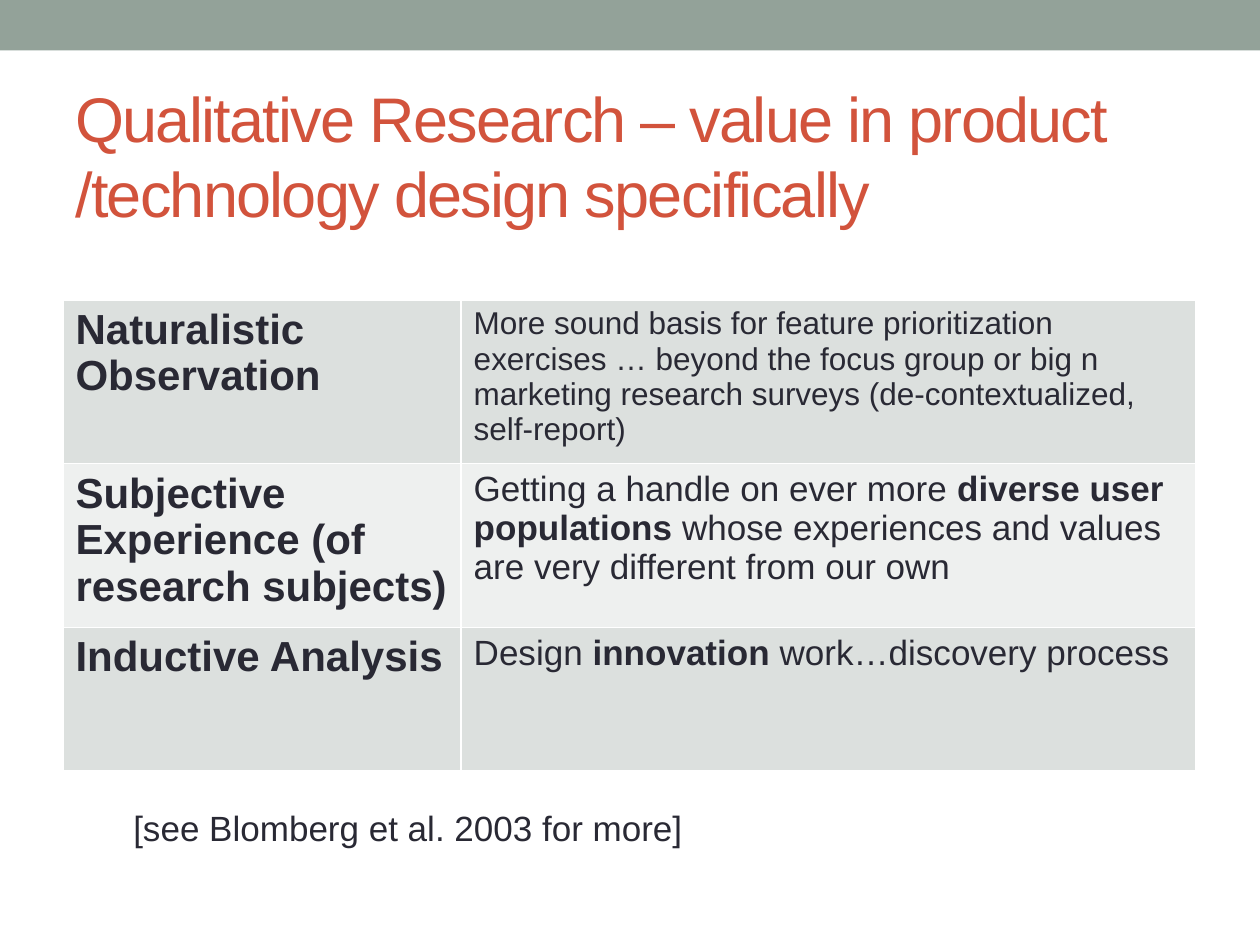
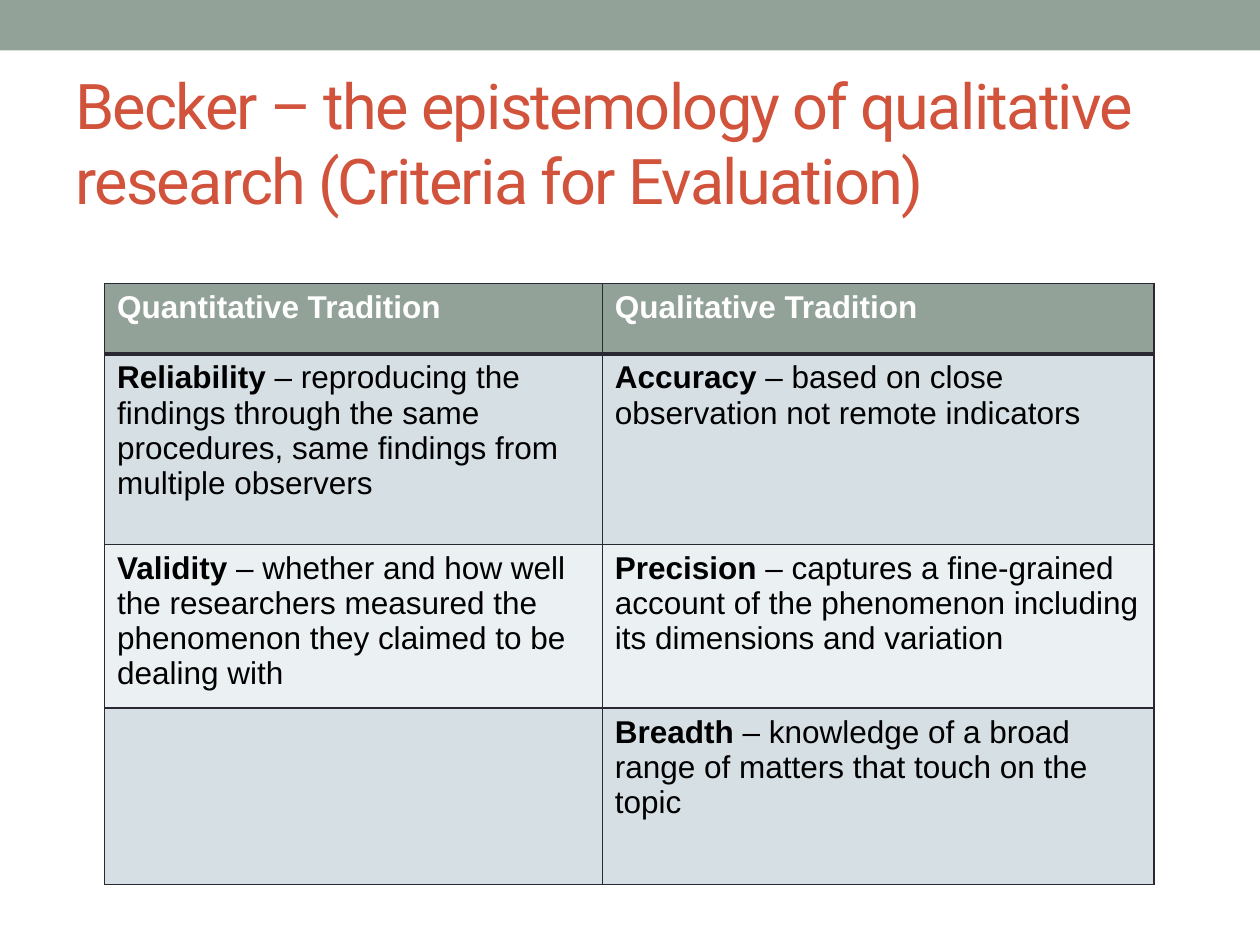
from lxml import etree
from pptx import Presentation
from pptx.dml.color import RGBColor
from pptx.enum.shapes import MSO_SHAPE
from pptx.enum.text import MSO_ANCHOR
from pptx.oxml.ns import qn
from pptx.util import Inches, Pt

RECTANGLE = MSO_SHAPE.RECTANGLE
MIDDLE = MSO_ANCHOR.MIDDLE

SAGE = "93A299"
RUST = "D2533C"
INK = "292934"
WHITE = "FFFFFF"
BLACK = "000000"


def color(hex_value):
    return RGBColor.from_string(hex_value)


def add_runs(paragraph, runs, size, hex_value, font="Arial", spacing=None):
    """Add (text, bold) runs that share one style."""
    for text, bold in runs:
        run = paragraph.add_run()
        run.text = text
        run.font.name = font
        run.font.size = Pt(size)
        run.font.bold = bold
        run.font.color.rgb = color(hex_value)
        if spacing is not None:
            run.font._element.set("spc", str(spacing))


# Each table cell is (size, runs), each run is (text, bold)
value_rows = [
    [(24, [("Naturalistic Observation", True)]),
     (18, [("More sound basis for feature prioritization exercises … beyond the focus "
            "group or big n marketing research surveys (de-contextualized, self-report)", False)])],
    [(24, [("Subjective Experience (of research subjects)", True)]),
     (20, [("Getting a handle on ever more ", False),
           ("diverse user populations ", True),
           ("whose experiences and values are very different from our own", False)])],
    [(24, [("Inductive Analysis", True)]),
     (20, [("Design ", False), ("innovation", True),
           (" work…discovery process", False)])],
]

criteria_rows = [
    [(18, [("Quantitative Tradition", True)]),
     (18, [("Qualitative Tradition", True)])],
    [(18, [("Reliability", True),
           (" – reproducing the findings through the same procedures, "
            "same findings from multiple observers", False)]),
     (18, [("Accuracy", True),
           (" – based on close observation not remote indicators", False)])],
    [(18, [("Validity", True),
           (" – whether and how well the researchers measured the phenomenon "
            "they claimed to be dealing with", False)]),
     (18, [("Precision", True),
           (" – captures a fine-grained account of the phenomenon including "
            "its dimensions and variation", False)])],
    [(18, []),
     (18, [("Breadth", True),
           (" – knowledge of a broad range of matters that touch on the topic", False)])],
]

slide_contents = [
    {
        "title": "Qualitative Research – value in product /technology design specifically",
        "title_font": "Arial",
        "title_box": (0.5, 0.69, 9, 1.08),
        "rows": value_rows,
        "table_corner": (0.5, 2.38),
        "columns": [3.16, 5.83],
        "heights": [1.21, 1.21, 1.14],
        "header": False,
        "bands": ["DCE0DE", "EEF0EF"],
        "text_color": INK,
        "border": WHITE,
        "citation": "[see Blomberg et al. 2003 for more]",
    },
    {
        "title": "Becker – the epistemology of qualitative research (Criteria for Evaluation)",
        "title_font": "Roboto",
        "title_box": (0.5, 0.5, 8.83, 1.25),
        "rows": criteria_rows,
        "table_corner": (0.83, 2.25),
        "columns": [3.95, 4.38],
        "heights": [0.56, 1.51, 1.22, 1.4],
        "header": True,
        "bands": ["D5DFE4", "EBF0F2"],
        "text_color": BLACK,
        "border": INK,
        "citation": None,
    },
]

presentation = Presentation()
presentation.slide_width = Inches(10)
presentation.slide_height = Inches(7.5)
blank_layout = presentation.slide_layouts[6]

for content in slide_contents:
    slide = presentation.slides.add_slide(blank_layout)

    # Top band
    band = slide.shapes.add_shape(RECTANGLE, 0, 0, Inches(10), Inches(0.4))
    band.shadow.inherit = False
    band.fill.solid()
    band.fill.fore_color.rgb = color(SAGE)
    band.line.fill.background()

    # Title
    title = slide.shapes.add_textbox(*[Inches(length) for length in content["title_box"]])
    title.text_frame.word_wrap = True
    title.text_frame.vertical_anchor = MIDDLE
    paragraph = title.text_frame.paragraphs[0]
    paragraph.line_spacing = Pt(43)
    add_runs(paragraph, [(content["title"], False)], 36, RUST, content["title_font"], -100)

    # Table grid
    rows, columns, heights = content["rows"], content["columns"], content["heights"]
    left, top = content["table_corner"]
    table = slide.shapes.add_table(
        len(rows), len(columns), Inches(left), Inches(top),
        Inches(sum(columns)), Inches(sum(heights))).table
    table.first_row = content["header"]
    table.horz_banding = False
    for column, width in zip(table.columns, columns):
        column.width = Inches(width)
    for row, height in zip(table.rows, heights):
        row.height = Inches(height)

    # Table cells: borders, fill, text
    for row_index, row_cells in enumerate(rows):
        is_header = content["header"] and row_index == 0
        below_header = content["header"] and row_index == 1
        fill = SAGE if is_header else content["bands"][(row_index - content["header"]) % 2]
        text_color = WHITE if is_header else content["text_color"]
        border_widths = {"a:lnL": 1, "a:lnR": 1,
                         "a:lnT": 3 if below_header else 1,
                         "a:lnB": 3 if is_header else 1}
        for column_index, (size, runs) in enumerate(row_cells):
            cell = table.cell(row_index, column_index)
            properties = cell._tc.get_or_add_tcPr()
            for tag, width in border_widths.items():
                line = etree.SubElement(properties, qn(tag), w=str(Pt(width)))
                line_fill = etree.SubElement(line, qn("a:solidFill"))
                etree.SubElement(line_fill, qn("a:srgbClr"), val=content["border"])
            cell.fill.solid()
            cell.fill.fore_color.rgb = color(fill)
            add_runs(cell.text_frame.paragraphs[0], runs, size, text_color)

    # Citation below the table
    if content["citation"]:
        citation = slide.shapes.add_textbox(
            Inches(0.96), Inches(6.35), Inches(4.6), Inches(0.44))
        citation.text_frame.word_wrap = False
        add_runs(citation.text_frame.paragraphs[0], [(content["citation"], False)], 20, INK)

presentation.save("out.pptx")
